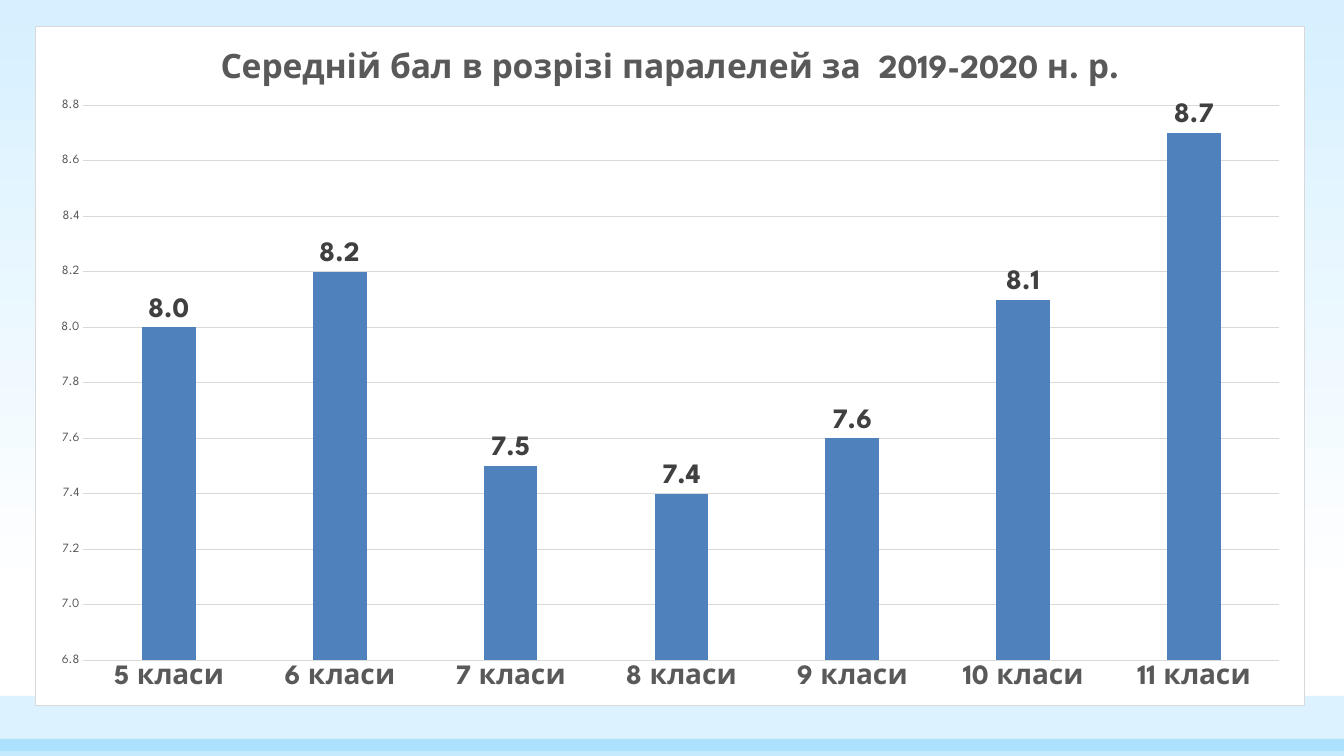
import lxml.etree
import pptx
import pptx.chart.data
import pptx.dml.color
import pptx.enum.chart
import pptx.enum.shapes
import pptx.oxml
import pptx.oxml.ns
import pptx.util

RGBColor = pptx.dml.color.RGBColor
SKY = RGBColor(0xD6, 0xF0, 0xFF)
WHITE = RGBColor(0xFF, 0xFF, 0xFF)
AQUA = RGBColor(0x31, 0xB6, 0xFD)
BLUE = RGBColor(0x4F, 0x81, 0xBD)
BLACK = RGBColor(0x00, 0x00, 0x00)
DARK = RGBColor(0x40, 0x40, 0x40)
GRAY = RGBColor(0x59, 0x59, 0x59)
PALE = RGBColor(0xD9, 0xD9, 0xD9)

PX = 914400 / 100.8
WIDE, HIGH = 1344, 756
TITLE = "Середній бал в розрізі паралелей за  2019-2020 н. р."
MARKS = {5: 8.0, 6: 8.2, 7: 7.5, 8: 7.4, 9: 7.6, 10: 8.1, 11: 8.7}
FRAME = (35, 26, 1270, 680)
PLOT = (83, 105, 1197, 556)


def emu(*sizes):
    return [round(size * PX) for size in sizes]


class Board:
    def __init__(self, face):
        self.face = face
        self.deck = pptx.Presentation()
        self.deck.slide_width, self.deck.slide_height = emu(WIDE, HIGH)
        self.slide = self.deck.slides.add_slide(self.deck.slide_layouts[6])

    def style(self, font, size, color, bold=False):
        font.name = self.face
        font.size = pptx.util.Pt(size)
        font.bold = bold
        font.color.rgb = color

    def line(self, line, color):
        line.color.rgb = color
        line.width = pptx.util.Pt(0.75)

    def fade(self, *stops):
        """Fill the background from top to bottom with (position, colour) stops."""
        fill = self.slide.background.fill
        fill.gradient()
        fill.gradient_angle = 270
        for stop, (place, color) in zip(fill.gradient_stops, stops):
            stop.position = place
            stop.color.rgb = color

    def band(self, top, high, color, alpha):
        """Draw a full-width stripe; alpha is opacity in percent."""
        shape = self.slide.shapes.add_shape(
            pptx.enum.shapes.MSO_SHAPE.RECTANGLE, *emu(0, top, WIDE, high))
        shape.shadow.inherit = False
        shape.line.fill.background()
        shape.fill.solid()
        shape.fill.fore_color.rgb = color
        tint = shape.element.spPr.find(".//" + pptx.oxml.ns.qn("a:srgbClr"))
        lxml.etree.SubElement(
            tint, pptx.oxml.ns.qn("a:alpha"), val=str(alpha * 1000))

    def bars(self, frame, plot, title, marks):
        data = pptx.chart.data.CategoryChartData(number_format="0.0")
        data.categories = [f"{grade} класи" for grade in marks]
        data.add_series("Series 1", list(marks.values()))
        chart = self.slide.shapes.add_chart(
            pptx.enum.chart.XL_CHART_TYPE.COLUMN_CLUSTERED,
            *emu(*frame), data).chart
        self.style(chart.font, 10, BLACK)
        chart.has_legend = False
        chart.has_title = True
        chart.chart_title.include_in_layout = False
        run = chart.chart_title.text_frame.paragraphs[0].add_run()
        run.text = title
        self.style(run.font, 24, GRAY, True)
        self.panel(chart)
        self.place(chart, frame, plot)
        self.axes(chart)
        self.fill(chart.plots[0])

    def panel(self, chart):
        """Give the whole chart a white ground and a thin border."""
        chart.element.find(pptx.oxml.ns.qn("c:chart")).addnext(
            pptx.oxml.parse_xml(
                f'<c:spPr {pptx.oxml.ns.nsdecls("c", "a")}>'
                f'<a:solidFill><a:srgbClr val="{WHITE}"/></a:solidFill>'
                f'<a:ln w="9525"><a:solidFill><a:srgbClr val="{PALE}"/>'
                '</a:solidFill></a:ln></c:spPr>'))

    def place(self, chart, frame, plot):
        """Pin the inner plot area to its place within the chart frame."""
        left, top, wide, high = frame
        parts = {"x": (plot[0] - left) / wide, "y": (plot[1] - top) / high,
                 "w": plot[2] / wide, "h": plot[3] / high}
        modes = "".join(f'<c:{side}Mode val="edge"/>' for side in "xy")
        sizes = "".join(f'<c:{key} val="{part:.4f}"/>'
                        for key, part in parts.items())
        area = chart.element.find(".//" + pptx.oxml.ns.qn("c:plotArea"))
        for old in area.findall(pptx.oxml.ns.qn("c:layout")):
            area.remove(old)
        area.insert(0, pptx.oxml.parse_xml(
            f'<c:layout {pptx.oxml.ns.nsdecls("c")}><c:manualLayout>'
            f'<c:layoutTarget val="inner"/>{modes}{sizes}'
            '</c:manualLayout></c:layout>'))

    def axes(self, chart):
        grades, scale = chart.category_axis, chart.value_axis
        for axis in (grades, scale):
            axis.major_tick_mark = pptx.enum.chart.XL_TICK_MARK.NONE
            axis.minor_tick_mark = pptx.enum.chart.XL_TICK_MARK.NONE
        self.style(grades.tick_labels.font, 20, GRAY, True)
        self.line(grades.format.line, PALE)
        self.style(scale.tick_labels.font, 9, GRAY)
        scale.tick_labels.number_format = "0.0"
        scale.tick_labels.number_format_is_linked = False
        scale.minimum_scale, scale.maximum_scale = 6.8, 8.8
        scale.major_unit = 0.2
        scale.format.line.fill.background()
        scale.has_major_gridlines = True
        self.line(scale.major_gridlines.format.line, PALE)

    def fill(self, plot):
        """Colour the columns and label them with their values."""
        plot.gap_width, plot.overlap = 219, -27
        plot.vary_by_categories = False
        series = plot.series[0]
        series.format.fill.solid()
        series.format.fill.fore_color.rgb = BLUE
        labels = series.data_labels
        labels.show_value = True
        labels.number_format = "0.0"
        labels.number_format_is_linked = False
        labels.position = pptx.enum.chart.XL_LABEL_POSITION.OUTSIDE_END
        self.style(labels.font, 20, DARK, True)


def main():
    board = Board("League Spartan")
    board.fade((0, SKY), (0.79, WHITE))
    board.band(696, 55, AQUA, 17)
    board.band(739, 17, AQUA, 28)
    board.bars(FRAME, PLOT, TITLE, MARKS)
    board.deck.save("out.pptx")


if __name__ == "__main__":
    main()
